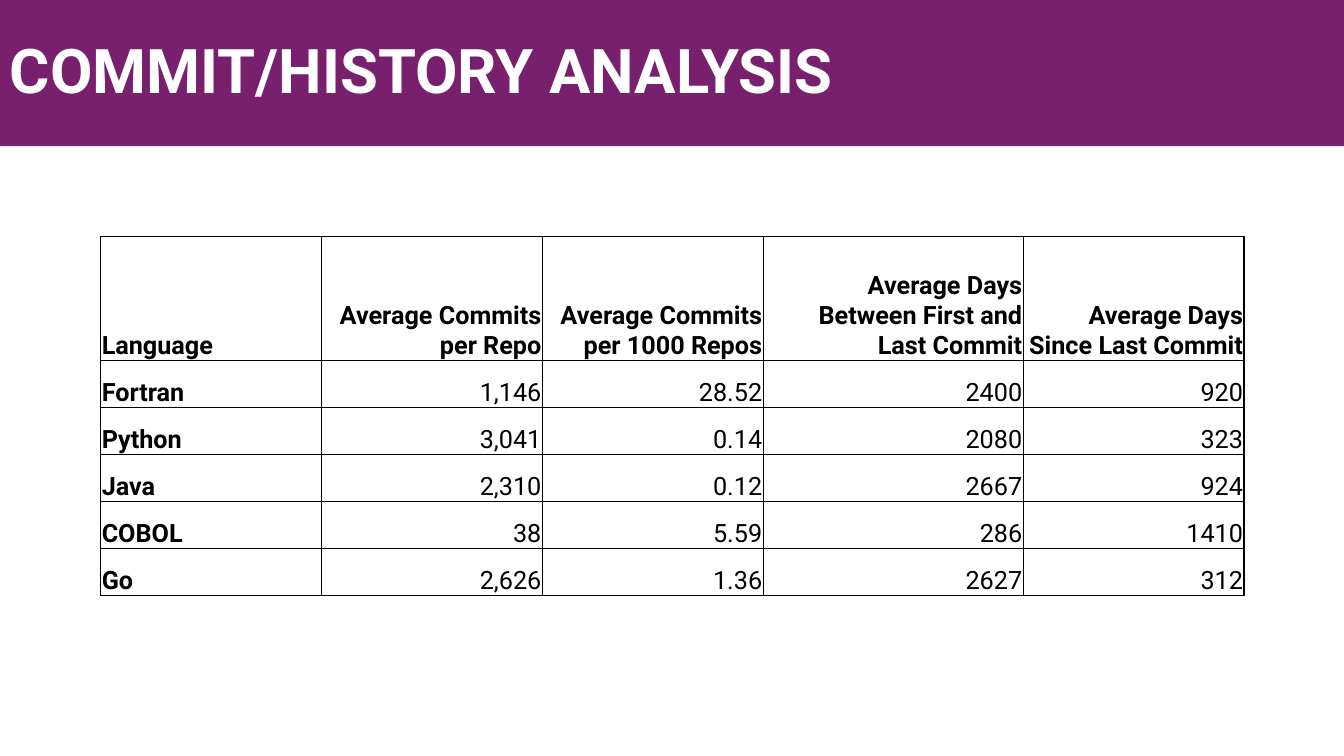
from lxml import etree
from pptx import Presentation
from pptx.dml.color import RGBColor
from pptx.enum import shapes, text
from pptx.oxml import ns
from pptx.util import Pt

PURPLE = RGBColor(0x78, 0x20, 0x6E)
WHITE = RGBColor(0xFF, 0xFF, 0xFF)
BLACK = RGBColor(0, 0, 0)
FONT = "Roboto"

PAGE_WIDTH, PAGE_HEIGHT = 960, 540
BANNER_BOX = (0, 0, PAGE_WIDTH, 104.4)
TABLE_BOX = (72, 168.8, 816.6, 256.6)
WIDE_COLUMN, WIDE_WIDTH = 3, 185.8
HEADER_HEIGHT = 88.6
BORDER_WIDTH = 1

COMMIT_ROWS = [
    ("Language", "Average Commits per Repo", "Average Commits per 1000 Repos",
     "Average Days Between First and Last Commit", "Average Days Since Last Commit"),
    ("Fortran", "1,146", "28.52", "2400", "920"),
    ("Python", "3,041", "0.14", "2080", "323"),
    ("Java", "2,310", "0.12", "2667", "924"),
    ("COBOL", "38", "5.59", "286", "1410"),
    ("Go", "2,626", "1.36", "2627", "312"),
]


def set_values(target, values):
    for name, value in values.items():
        setattr(target, name, value)


def write_text(para, wording, size, color, bold):
    span = para.add_run()
    span.text = wording
    set_values(span.font, {"name": FONT, "size": Pt(size), "bold": bold})
    span.font.color.rgb = color


def add_banner(page, box, title):
    banner = page.shapes.add_shape(shapes.MSO_SHAPE.RECTANGLE, *map(Pt, box))
    banner.shadow.inherit = False
    banner.fill.solid()
    banner.fill.fore_color.rgb = PURPLE
    banner.line.fill.background()
    frame = banner.text_frame
    set_values(frame, {"word_wrap": True, "vertical_anchor": text.MSO_ANCHOR.MIDDLE})
    para = frame.paragraphs[0]
    set_values(para, {"alignment": text.PP_ALIGN.LEFT, "line_spacing": 0.9})
    write_text(para, title, 44, WHITE, True)


def draw_borders(cell):
    properties = cell._tc.get_or_add_tcPr()
    for index, side in enumerate(("lnL", "lnR", "lnT", "lnB")):
        line = etree.Element(ns.qn(f"a:{side}"), w=str(Pt(BORDER_WIDTH)))
        fill = etree.SubElement(line, ns.qn("a:solidFill"))
        etree.SubElement(fill, ns.qn("a:srgbClr"), val=str(BLACK))
        properties.insert(index, line)


def fill_cell(cell, wording, bold, alignment):
    set_values(cell, {
        "margin_left": Pt(0.7), "margin_right": Pt(0.7),
        "margin_top": Pt(0.7), "margin_bottom": Pt(0),
        "vertical_anchor": text.MSO_ANCHOR.BOTTOM,
    })
    cell.fill.background()
    draw_borders(cell)
    para = cell.text_frame.paragraphs[0]
    para.alignment = alignment
    write_text(para, wording, 18, BLACK, bold)


def add_commit_table(page, box, rows):
    """Bold header row and first column; every column but the first is right-aligned."""
    width, height = box[2:]
    table = page.shapes.add_table(len(rows), len(rows[0]), *map(Pt, box)).table
    set_values(table, {"first_row": False, "horz_banding": False})
    for index, column in enumerate(table.columns):
        plain_width = (width - WIDE_WIDTH) / (len(rows[0]) - 1)
        column.width = Pt(WIDE_WIDTH if index == WIDE_COLUMN else plain_width)
    for index, row in enumerate(table.rows):
        plain_height = (height - HEADER_HEIGHT) / (len(rows) - 1)
        row.height = Pt(plain_height if index else HEADER_HEIGHT)
    for row_index, row in enumerate(rows):
        for column_index, wording in enumerate(row):
            alignment = text.PP_ALIGN.RIGHT if column_index else text.PP_ALIGN.LEFT
            bold = row_index == 0 or column_index == 0
            fill_cell(table.cell(row_index, column_index), wording, bold, alignment)


def main():
    deck = Presentation()
    set_values(deck, {"slide_width": Pt(PAGE_WIDTH), "slide_height": Pt(PAGE_HEIGHT)})
    page = deck.slides.add_slide(deck.slide_layouts[6])
    add_banner(page, BANNER_BOX, "COMMIT/HISTORY ANALYSIS")
    add_commit_table(page, TABLE_BOX, COMMIT_ROWS)
    deck.save("out.pptx")


if __name__ == "__main__":
    main()
